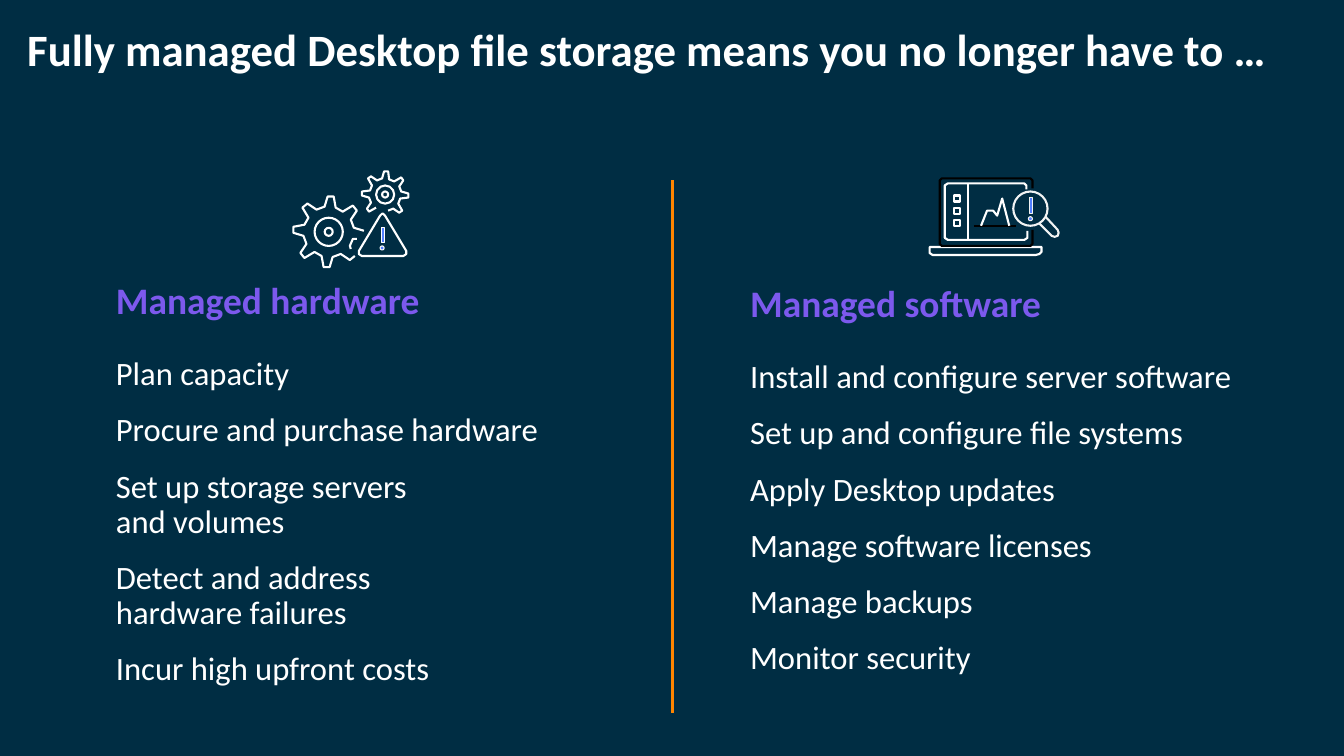
from dataclasses import dataclass
from math import cos, radians, sin

from lxml.etree import SubElement
from pptx import Presentation
from pptx.dml.color import RGBColor as RGB
from pptx.enum.shapes import MSO_CONNECTOR as CONN, MSO_SHAPE as SHAPE
from pptx.enum.text import MSO_AUTO_SIZE as FIT
from pptx.oxml.ns import qn
from pptx.util import Emu, Pt

PX = 9144  # 100 px to the inch


@dataclass(frozen=True)
class Theme:
    font: str = "Calibri"
    navy: str = "002D43"
    white: str = "FFFFFF"
    pale: str = "F1F3F3"
    black: str = "000000"
    violet: str = "7C59ED"
    blue: str = "527FFF"
    orange: str = "FF8500"
    title: float = 32
    heading: float = 26.7
    body: float = 23.3
    line: float = 1.5
    thin: float = 0.75
    divider: float = 2


T = Theme()

TITLE = "Fully managed Desktop file storage means you no longer have to …"
COLUMNS = [
    (98, 267, 500, "Managed hardware", [
        "Plan capacity",
        "Procure and purchase hardware",
        "Set up storage servers\vand volumes",
        "Detect and address\vhardware failures",
        "Incur high upfront costs",
    ]),
    (727, 270, 577, "Managed software", [
        "Install and configure server software",
        "Set up and configure file systems",
        "Apply Desktop updates",
        "Manage software licenses",
        "Manage backups",
        "Monitor security",
    ]),
]


def px(*values):
    return [Emu(v * PX) for v in values]


def style(s, color, width=T.line, fill=None):
    s.shadow.inherit = False
    s.line.color.rgb = RGB.from_string(color)
    s.line.width = Pt(width)
    if fill:
        s.fill.solid()
        s.fill.fore_color.rgb = RGB.from_string(fill)
    else:
        s.fill.background()


def outline(shapes, points, color=T.white, close=False):
    builder = shapes.build_freeform(*points[0], scale=PX)
    builder.add_line_segments(points[1:], close=close)
    style(builder.convert_to_shape(), color)


def preset(shapes, kind, box, color=T.white, width=T.line, fill=None):
    style(shapes.add_shape(kind, *px(*box)), color, width, fill)


def circle(shapes, cx, cy, radius, color=T.white, width=T.line, fill=None):
    box = (cx - radius, cy - radius, 2 * radius, 2 * radius)
    preset(shapes, SHAPE.OVAL, box, color, width, fill)


def exclamation(shapes, cx, top, height, color):
    preset(shapes, SHAPE.RECTANGLE, (cx - 1, top, 3, height), color, T.thin, T.blue)
    circle(shapes, cx, top + height + 5, 2, color, T.thin, T.blue)


def gear(shapes, cx, cy, tip, base, first, start, end):
    """Open outline of eight teeth, counterclockwise from tooth `first`."""
    profile = [(-13, base), (-5, tip), (5, tip), (13, base)]
    points = []
    for tooth in range(first, first + 8):
        for offset, radius in profile:
            angle = radians(45 * tooth - 3 + offset)
            points.append((round(cx + radius * cos(angle)),
                           round(cy - radius * sin(angle))))
    outline(shapes, points[start:end])


def hardware_icon(shapes):
    gear(shapes, 326, 230, 35, 25, 0, 2, 31)
    outline(shapes, [(348, 247), (347, 244), (350, 237), (354, 237)])
    gear(shapes, 382, 193, 23, 16, 6, 3, 32)
    for cx, cy, radii in ((326, 230, (14, 4)), (382, 193, (9, 3))):
        for radius in radii:
            circle(shapes, cx, cy, radius)
    outline(shapes, [(377, 214), (356, 249), (356, 252), (359, 254), (400, 254),
                     (403, 252), (403, 249), (382, 214), (380, 212), (379, 212)],
            close=True)
    exclamation(shapes, 379, 226, 15, T.white)


def software_icon(shapes):
    outline(shapes, [(922, 245), (922, 251), (925, 253), (929, 253), (1027, 253),
                     (1031, 252), (1033, 250), (1033, 245)], close=True)
    outline(shapes, [(1019, 229), (1019, 236), (1016, 238), (940, 238), (937, 236),
                     (937, 184), (940, 182), (1016, 182), (1018, 184), (1018, 188)])
    outline(shapes, [(1024, 187), (1024, 179), (1022, 177), (934, 177), (932, 179),
                     (932, 242), (934, 244), (1022, 244), (1024, 242), (1024, 228)],
            T.black)
    outline(shapes, [(960, 238), (960, 183)])
    exclamation(shapes, 1022, 196, 16, T.pale)
    circle(shapes, 1022, 207, 17, T.pale)
    outline(shapes, [(1037, 215), (1049, 228), (1050, 231), (1049, 234),
                     (1046, 235), (1043, 234), (1031, 222)], T.pale)
    outline(shapes, [(966, 224), (1008, 224)], T.black)
    outline(shapes, [(973, 224), (979, 209), (985, 209), (989, 214),
                     (994, 197), (1001, 224)])
    for row in range(3):
        preset(shapes, SHAPE.RECTANGLE, (946, 194 + 12 * row, 6, 6))


def text_box(shapes, box, inset_x, inset_y):
    tf = shapes.add_textbox(*px(*box)).text_frame
    tf.word_wrap = True
    tf.auto_size = FIT.SHAPE_TO_FIT_TEXT
    tf.margin_left = tf.margin_right = Emu(inset_x * PX)
    tf.margin_top = tf.margin_bottom = Emu(inset_y * PX)
    return tf


def write(p, text, size, color, bold=False, before=0):
    p.text = text
    p.line_spacing = 0.9
    p.space_before = Pt(before)
    for r in p.runs:
        r.font.name = T.font
        r.font.size = Pt(size)
        r.font.bold = bold
        r.font.color.rgb = RGB.from_string(color)


def column(shapes, left, top, width, heading, items):
    tf = text_box(shapes, (left, top, width, 480), 17, 13)
    write(tf.paragraphs[0], heading, T.heading, T.violet, bold=True)
    for i, item in enumerate(items):
        write(tf.add_paragraph(), item, T.body, T.white, before=15 if i else 25)


def divider(shapes, x, top, bottom):
    s = shapes.add_connector(CONN.STRAIGHT, *px(x, top, x, bottom))
    s.line.color.rgb = RGB.from_string(T.orange)
    s.line.width = Pt(T.divider)
    SubElement(s._element.spPr, qn("a:effectLst"))


def main():
    prs = Presentation()
    prs.slide_width, prs.slide_height = px(1333, 750)
    slide = prs.slides.add_slide(prs.slide_layouts[6])
    slide.background.fill.solid()
    slide.background.fill.fore_color.rgb = RGB.from_string(T.navy)
    shapes = slide.shapes

    for spec in COLUMNS:
        column(shapes, *spec)
    divider(shapes, 667, 179, 707)
    hardware_icon(shapes)
    software_icon(shapes)
    tf = text_box(shapes, (27, 23, 1291, 59), 0, 5)
    write(tf.paragraphs[0], TITLE, T.title, T.white, bold=True)

    prs.save("out.pptx")


if __name__ == "__main__":
    main()
